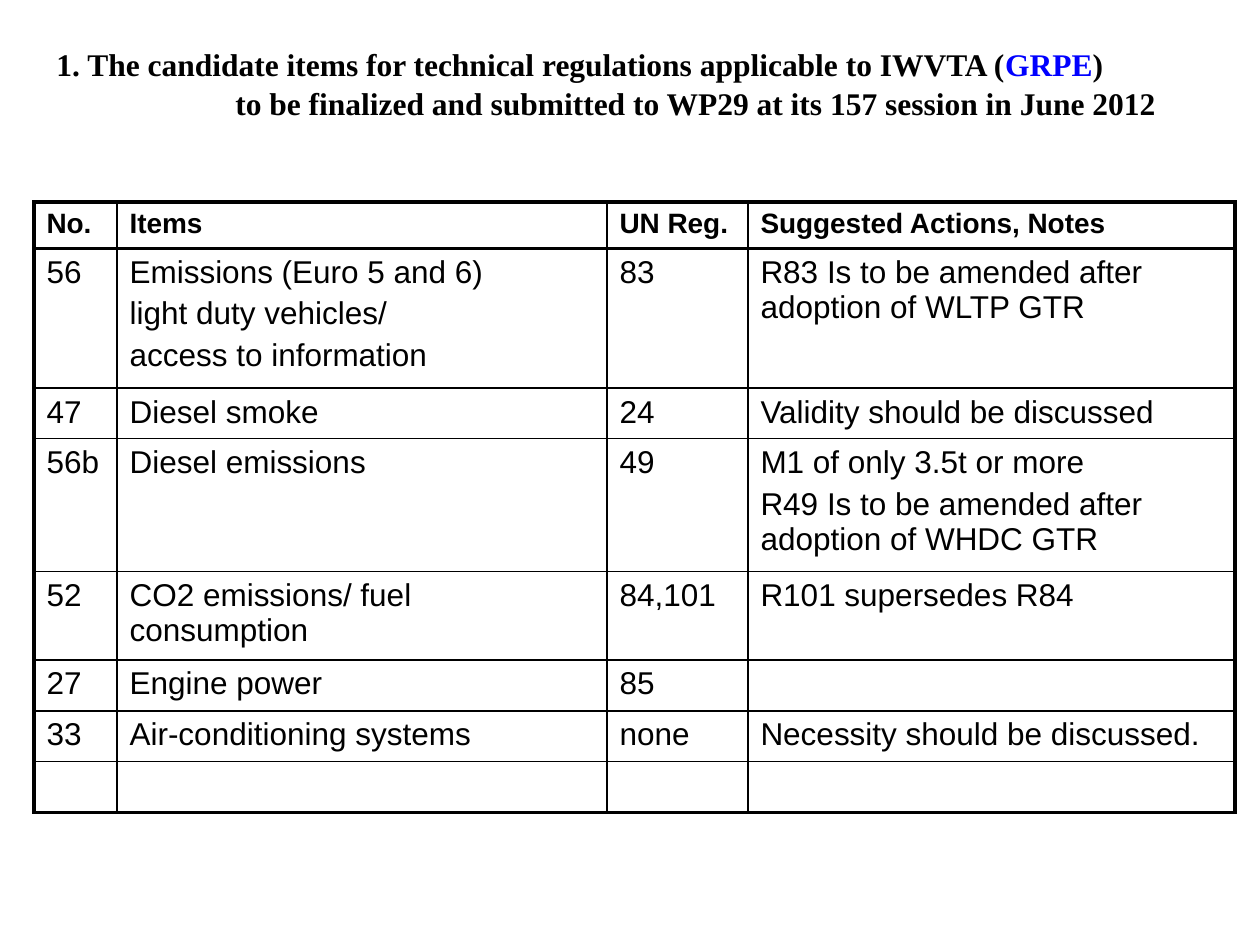
from dataclasses import dataclass

from lxml import etree
from pptx import Presentation
from pptx import util as u
from pptx.dml.color import RGBColor
from pptx.enum import text
from pptx.oxml.ns import qn

PX = u.Inches(1) // 126


@dataclass(frozen=True)
class Theme:
    ink: str = "000000"
    accent: str = "0000FF"
    title_font: str = "Times New Roman"
    table_font: str = "Arial"
    body_size: int = 18
    header_size: int = 16
    thin: float = 1
    thick: float = 2.25


THEME = Theme()

COLUMN_WIDTHS = [83, 490, 141, 487]
ROW_HEIGHTS = [45, 140, 50, 133, 87, 51, 50, 51]
ROWS = [
    ["No.", "Items", "UN Reg.", "Suggested Actions, Notes"],
    ["56", "Emissions (Euro 5 and 6)\nlight duty vehicles/\naccess to information", "83",
     "R83 Is to be amended after adoption of WLTP GTR"],
    ["47", "Diesel smoke", "24", "Validity should be discussed"],
    ["56b", "Diesel emissions", "49",
     "M1 of only 3.5t or more\nR49 Is to be amended after adoption of WHDC GTR"],
    ["52", "CO2 emissions/ fuel consumption", "84,101", "R101 supersedes R84"],
    ["27", "Engine power", "85", ""],
    ["33", "Air-conditioning systems", "none", "Necessity should be discussed."],
    ["", "", "", ""],
]


def px(*lengths):
    return [u.Emu(length * PX) for length in lengths]


def add_run(paragraph, content, font, size=THEME.body_size, bold=False, color=THEME.ink):
    run = paragraph.add_run()
    run.text = content
    run.font.name = font
    run.font.size = u.Pt(size)
    run.font.bold = bold
    run.font.color.rgb = RGBColor.from_string(color)


def add_heading(slide, box, runs):
    """Add one heading line; runs are (text, colour) pairs."""
    frame = slide.shapes.add_textbox(*px(*box)).text_frame
    frame.word_wrap = True
    frame.auto_size = text.MSO_AUTO_SIZE.SHAPE_TO_FIT_TEXT
    frame.vertical_anchor = text.MSO_ANCHOR.MIDDLE
    for content, color in runs:
        add_run(frame.paragraphs[0], content, THEME.title_font, bold=True, color=color)


def set_borders(cell, widths):
    """Draw the cell's sides; widths are points for left, right, top, bottom."""
    properties = cell._tc.get_or_add_tcPr()
    for index, (side, width) in enumerate(zip("LRTB", widths)):
        line = etree.Element(qn(f"a:ln{side}"), w=str(u.Pt(width)))
        fill = etree.SubElement(line, qn("a:solidFill"))
        etree.SubElement(fill, qn("a:srgbClr"), val=THEME.ink)
        properties.insert(index, line)


def fill_cell(cell, content, size, bold):
    for index, line in enumerate(content.split("\n")):
        frame = cell.text_frame
        paragraph = frame.add_paragraph() if index else frame.paragraphs[0]
        paragraph.space_before = u.Pt(size * 0.2)
        if line:
            add_run(paragraph, line, THEME.table_font, size, bold)
        else:
            paragraph.font.size = u.Pt(size)


def add_items_table(slide, left, top):
    frame = slide.shapes.add_table(
        len(ROWS), len(COLUMN_WIDTHS),
        *px(left, top, sum(COLUMN_WIDTHS), sum(ROW_HEIGHTS)))
    table = frame.table
    table.first_row = table.horz_banding = False
    for column, width in zip(table.columns, px(*COLUMN_WIDTHS)):
        column.width = width
    for row, height in zip(table.rows, px(*ROW_HEIGHTS)):
        row.height = height

    last_row, last_column = len(ROWS) - 1, len(COLUMN_WIDTHS) - 1
    for r, row in enumerate(ROWS):
        for c, content in enumerate(row):
            cell = table.cell(r, c)
            header = r == 0
            fill_cell(cell, content, THEME.header_size if header else THEME.body_size, header)
            cell.fill.background()
            heavy = (c == 0, c == last_column, r <= 1, r in (0, last_row))
            set_borders(cell, [THEME.thick if side else THEME.thin for side in heavy])


def main():
    presentation = Presentation()
    presentation.slide_width, presentation.slide_height = px(1260, 945)
    slide = presentation.slides.add_slide(presentation.slide_layouts[6])
    add_heading(slide, (44, 39, 1132, 50), [
        ("1. The candidate items for technical regulations applicable to IWVTA (", THEME.ink),
        ("GRPE", THEME.accent),
        (")", THEME.ink),
    ])
    add_items_table(slide, 34, 202)
    add_heading(slide, (223, 78, 983, 50), [
        ("to be finalized and submitted to WP29 at its 157 session in June 2012", THEME.ink),
    ])
    presentation.save("out.pptx")


if __name__ == "__main__":
    main()
